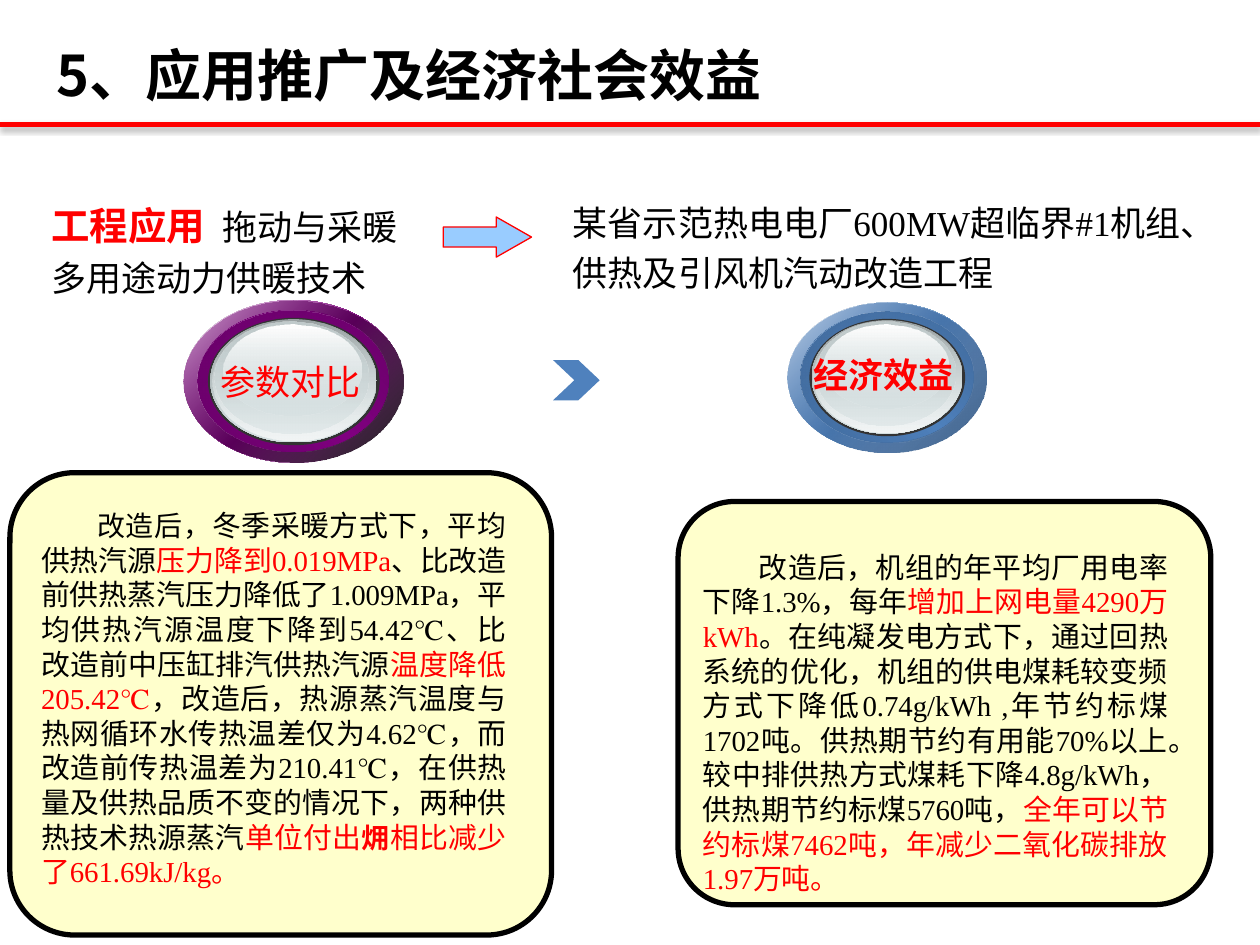
from lxml.etree import SubElement
from pptx import Presentation
from pptx.dml.color import RGBColor
from pptx.enum.shapes import MSO_CONNECTOR, MSO_SHAPE
from pptx.enum.text import MSO_ANCHOR, MSO_AUTO_SIZE, PP_ALIGN
from pptx.oxml.ns import qn
from pptx.util import Cm, Pt

BLACK = RGBColor(0x00, 0x00, 0x00)
WHITE = RGBColor(0xFF, 0xFF, 0xFF)
RED = RGBColor(0xFF, 0x00, 0x00)
CREAM = RGBColor(0xFF, 0xFF, 0xCC)
SKY = RGBColor(0x99, 0xCC, 0xFF)
BLUE = RGBColor(0x4F, 0x81, 0xBD)
NAVY = RGBColor(0x39, 0x5C, 0x87)
STEEL = RGBColor(0x3C, 0x63, 0x91)
SLATE = RGBColor(0x41, 0x6A, 0x9B)
PURPLE = RGBColor(0x80, 0x00, 0x80)
PLUM = RGBColor(0x62, 0x00, 0x62)
GRAPE = RGBColor(0x69, 0x00, 0x69)
COAL = RGBColor(0x33, 0x33, 0x33)
GRAY = RGBColor(0x99, 0xA1, 0xA2)
SILVER = RGBColor(0xC1, 0xCB, 0xCC)
MIST = RGBColor(0xD6, 0xE1, 0xE2)
PEARL = RGBColor(0xF2, 0xF5, 0xF5)

SANS = "Noto Sans CJK SC"
SERIF = "Times New Roman"
HEAD = dict(name=SANS, size=Pt(32), bold=True)
TOPIC = dict(name=SANS, size=Pt(22), bold=True)
LEAD = dict(name=SANS, size=Pt(20))
SITE = dict(name=SERIF, size=Pt(20))
BODY = dict(name=SERIF, size=Pt(16.5))
START = dict(name=SERIF, size=Pt(16))
STRONG = dict(name=SERIF, size=Pt(16), bold=True)


def place(box):
    return [Cm(n) for n in box]


class Deck:
    def __init__(self):
        self.show = Presentation()
        self.show.slide_width, self.show.slide_height = Cm(25.4), Cm(19.05)
        self.slide = self.show.slides.add_slide(self.show.slide_layouts[6])
        self.shapes = self.slide.shapes

    def rule(self, y):
        line = self.shapes.add_connector(
            MSO_CONNECTOR.STRAIGHT, 0, Cm(y), Cm(25.4), Cm(y))
        line.line.color.rgb = RED
        line.line.width = Pt(3)
        glow = SubElement(line._element.spPr, qn("a:effectLst"))
        shade = SubElement(glow, qn("a:outerShdw"), blurRad=str(Pt(3.1)),
                           dist=str(Pt(1.8)), dir="5400000", rotWithShape="0")
        tint = SubElement(shade, qn("a:srgbClr"), val=str(BLACK))
        SubElement(tint, qn("a:alpha"), val="35000")

    def shape(self, kind, box, fill, edge=None, width=0, adjust=(), home=None):
        item = (home or self.shapes).add_shape(kind, *place(box))
        item.shadow.inherit = False
        for i, part in enumerate(adjust):
            item.adjustments[i] = part
        if isinstance(fill, RGBColor):
            item.fill.solid()
            item.fill.fore_color.rgb = fill
        else:
            self.blend(item, *fill)
        if edge is None:
            item.line.fill.background()
        else:
            item.line.color.rgb = edge
            item.line.width = Pt(width)
        return item

    def blend(self, item, angle, *stops):
        item.fill.gradient()
        item.fill.gradient_angle = 360 - angle
        ramp = next(item._element.spPr.iter(qn("a:gsLst")))
        for old in list(ramp):
            ramp.remove(old)
        for i, (color, alpha) in enumerate(stops):
            spot = SubElement(ramp, qn("a:gs"),
                              pos=str(100000 * i // (len(stops) - 1)))
            tint = SubElement(spot, qn("a:srgbClr"), val=str(color))
            if alpha < 100:
                SubElement(tint, qn("a:alpha"), val=str(alpha * 1000))

    def text(self, box, runs, frame=None, para=None, indent=0, home=None):
        area = (home or self.shapes).add_textbox(*place(box)).text_frame
        base = dict(word_wrap=True, auto_size=MSO_AUTO_SIZE.SHAPE_TO_FIT_TEXT)
        line = area.paragraphs[0]
        for goal, style in ((area, base | (frame or {})), (line, para or {})):
            for key, value in style.items():
                setattr(goal, key, value)
        if indent:
            line._p.get_or_add_pPr().set("indent", str(Cm(indent)))
        for words, style, color in runs:
            run = line.add_run()
            run.text = words
            for key, value in style.items():
                setattr(run.font, key, value)
            run.font.color.rgb = color
            SubElement(run._r.get_or_add_rPr(), qn("a:ea"), typeface=SANS)
            if words == " ":
                run._r.get_or_add_rPr().set("spc", "490")

    def badge(self, box, hues, label, spot, style):
        main, dark, alpha, ring, inner = hues
        layers = [
            (0, 0, 100, 100, (45, (WHITE, 100), (main, 100), (WHITE, 100))),
            (0, 0, 100, 100, (45, (main, 32), (dark, alpha))),
            (6.3, 6.2, 87, 87, (315, (ring, 100), (main, 100), (ring, 100))),
            (6.3, 6.2, 87, 87, (45, (inner, 100), (main, 0))),
            (10.9, 10.9, 78.3, 78.3, COAL),
            (12, 11.7, 75.9, 75.8, (90, (GRAY, 100), (MIST, 100))),
            (13.2, 12.5, 74.1, 74.1, (90, (MIST, 0), (PEARL, 100))),
            (14.1, 12.9, 70.2, 69, (90, (SILVER, 100), (MIST, 48))),
            (18.1, 14.9, 62.7, 56, (90, (WHITE, 100), (MIST, 38))),
        ]
        home = self.shapes.add_group_shape().shapes
        left, top, wide, high = box
        for x, y, w, h, fill in layers:
            oval = (left + wide * x / 100, top + high * y / 100,
                    wide * w / 100, high * h / 100)
            self.shape(MSO_SHAPE.OVAL, oval, fill, home=home)
        self.text(spot, [(label, style, RED)], dict(word_wrap=False),
                  dict(alignment=PP_ALIGN.CENTER), home=home)

    def panel(self, box, spot, runs):
        self.shape(MSO_SHAPE.ROUNDED_RECTANGLE, box, CREAM, BLACK, 3, [0.14])
        self.text(spot, runs, para=dict(alignment=PP_ALIGN.JUSTIFY), indent=1.13)


def main():
    deck = Deck()
    deck.rule(2.51)
    deck.text((0.89, 0.74, 24, 1.52), [("5、应用推广及经济社会效益", HEAD, BLACK)],
              dict(vertical_anchor=MSO_ANCHOR.MIDDLE,
                   auto_size=MSO_AUTO_SIZE.NONE))

    loose = dict(line_spacing=1.2)
    deck.text((0.79, 3.76, 7.9, 2.41), [
        ("工程应用", TOPIC, RED), (" ", TOPIC, RED),
        ("拖动与采暖多用途动力供暖技术", LEAD, BLACK)], para=loose)
    deck.text((11.3, 3.76, 13.16, 2.31), [
        ("某省示范热电电厂600MW超临界#1机组、供热及引风机汽动改造工程",
         SITE, BLACK)], para=loose)
    arrow = deck.shape(MSO_SHAPE.UP_ARROW, (9.42, 3.89, 0.81, 1.78), SKY, RED,
                       0.75, [0.5, 0.88])
    arrow.rotation = 90
    deck.shape(MSO_SHAPE.CHEVRON, (11.15, 7.26, 0.94, 0.81), BLUE, adjust=[0.53])

    deck.badge((3.71, 6.05, 4.42, 3.28), (PURPLE, BLACK, 90, PLUM, GRAPE),
               "参数对比", (4.19, 7.14, 3.35, 1.12), LEAD)
    deck.badge((15.88, 6.1, 4.01, 3.02), (BLUE, NAVY, 100, STEEL, SLATE),
               "经济效益", (16.13, 7.01, 3.38, 1.12), LEAD | dict(bold=True))

    deck.panel((0.2, 9.53, 10.92, 9.32), (0.58, 10.11, 9.88, 8.03), [
        ("改造后，", START, BLACK),
        ("冬季采暖方式下，平均供热汽源", BODY, BLACK),
        ("压力降到0.019MPa", BODY, RED),
        ("、比改造前供热蒸汽压力降低了1.009MPa，平均供热汽源温度下降到54.42℃、"
         "比改造前中压缸排汽供热汽源", BODY, BLACK),
        ("温度降低205.42℃", BODY, RED),
        ("，改造后，热源蒸汽温度与热网循环水传热温差仅为4.62℃，而改造前传热温差为"
         "210.41℃，在供热量及供热品质不变的情况下，两种供热技术热源蒸汽", BODY, BLACK),
        ("单位付出", BODY, RED),
        ("㶲", STRONG, RED),
        ("相比减少了661.69kJ/kg。", BODY, RED)])
    deck.panel((13.67, 10.11, 10.74, 8.13), (13.92, 10.95, 9.88, 7.44), [
        ("改造后，机组的年平均厂用电率下降1.3%，每年", BODY, BLACK),
        ("增加上网电量4290万kWh", BODY, RED),
        ("。在纯凝发电方式下，通过回热系统的优化，机组的供电煤耗较变频方式下降低"
         "0.74g/kWh ,年节约标煤1702吨。供热期节约有用能70%以上。"
         "较中排供热方式煤耗下降4.8g/kWh，供热期节约标煤5760吨，", BODY, BLACK),
        ("全年可以节约标煤7462吨，年减少二氧化碳排放1.97万吨。", BODY, RED)])
    deck.show.save("out.pptx")


if __name__ == "__main__":
    main()
